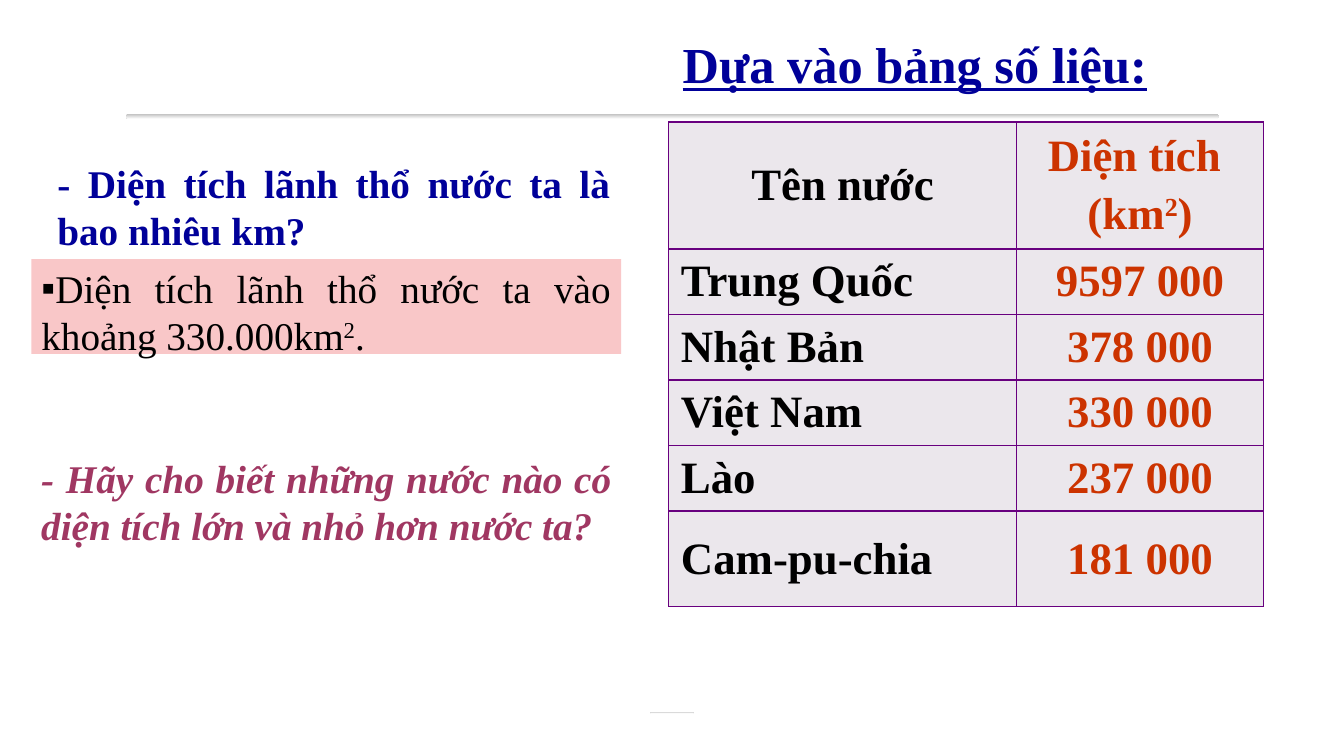
from dataclasses import dataclass

from lxml.etree import SubElement
from pptx import Presentation
from pptx.dml.color import RGBColor
from pptx.enum.shapes import MSO_SHAPE as Shape
from pptx.enum.text import MSO_ANCHOR as Anchor, MSO_AUTO_SIZE as AutoSize, PP_ALIGN as Align
from pptx.oxml.ns import qn
from pptx.util import Emu, Inches, Pt

FONT = "Times New Roman"
NAVY, PLUM, RUST, BLACK = "000099", "A03762", "CC3300", "000000"
PINK, LILAC, PURPLE = "F9C7C8", "EBE7EC", "68007F"
GREY, WHITE = "BFBFBF", "FFFFFF"

prs = Presentation()
prs.slide_width, prs.slide_height = Inches(13.33), Inches(7.5)


@dataclass(frozen=True)
class Box:
    """Place and size as percentages of the slide."""
    x: float
    y: float
    w: float
    h: float


@dataclass(frozen=True)
class Question:
    text: str
    box: Box
    color: str
    italic: bool = False


@dataclass(frozen=True)
class Country:
    name: str
    area: str


def across(share: float) -> Emu:
    return Emu(round(prs.slide_width * share / 100))


def down(share: float) -> Emu:
    return Emu(round(prs.slide_height * share / 100))


def place(box: Box) -> tuple:
    return across(box.x), down(box.y), across(box.w), down(box.h)


def rgb(color: str) -> RGBColor:
    return RGBColor.from_string(color)


def write(tf, text: str, *, size: float, color: str, align=Align.LEFT, bold=False,
          italic=False, underline=False, bullet="", gap=0.0) -> None:
    """Each line is a paragraph; text between carets is superscript."""
    for i, line in enumerate(text.split("\n")):
        p = tf.add_paragraph() if i else tf.paragraphs[0]
        p.alignment = align
        p.space_before = Pt(gap if i else 0)
        if bullet:
            pPr = p._p.get_or_add_pPr()
            pPr.set("marL", "0")
            pPr.set("indent", "0")
            SubElement(pPr, qn("a:buChar")).set("char", bullet)
        for j, part in enumerate(line.split("^")):
            r = p.add_run()
            r.text = part
            r.font.name, r.font.size = FONT, Pt(size)
            r.font.bold, r.font.italic, r.font.underline = bold, italic, underline
            r.font.color.rgb = rgb(color)
            if j % 2:
                r._r.get_or_add_rPr().set("baseline", "30000")


def setup_frame(sp, box: Box):
    """Move a text shape and return its wrapped, top-anchored frame."""
    sp.left, sp.top, sp.width, sp.height = place(box)
    tf = sp.text_frame
    tf.word_wrap = True
    tf.auto_size = AutoSize.SHAPE_TO_FIT_TEXT
    tf.vertical_anchor = Anchor.TOP
    return tf


def add_rule(box: Box) -> None:
    sp = s.shapes.add_shape(Shape.ROUNDED_RECTANGLE, *place(box))
    sp.adjustments[0] = 0.5
    sp.shadow.inherit = False
    sp.line.fill.background()
    sp.fill.gradient()
    sp.fill.gradient_angle = 270
    for stop, color in zip(sp.fill.gradient_stops, (GREY, WHITE)):
        stop.color.rgb = rgb(color)


def add_borders(cell, color: str) -> None:
    tcPr = cell._tc.get_or_add_tcPr()
    for i, side in enumerate(("lnL", "lnR", "lnT", "lnB")):
        ln = tcPr.makeelement(qn(f"a:{side}"), {"w": str(Pt(1))})
        fill = SubElement(ln, qn("a:solidFill"))
        SubElement(fill, qn("a:srgbClr")).set("val", color)
        tcPr.insert(i, ln)


def fill_cell(cell, text: str, color: str, align) -> None:
    cell.fill.solid()
    cell.fill.fore_color.rgb = rgb(LILAC)
    cell.vertical_anchor = Anchor.MIDDLE
    cell.margin_left = cell.margin_right = Inches(0.12)
    cell.margin_top = cell.margin_bottom = Inches(0.05)
    write(cell.text_frame, text, size=32, color=color, align=align, bold=True, gap=6.4)
    add_borders(cell, PURPLE)


def add_area_table(x: float, y: float, cols: list[float], rows: list[float],
                   countries: list[Country]) -> None:
    box = Box(x, y, sum(cols), sum(rows))
    table = s.shapes.add_table(len(rows), len(cols), *place(box)).table
    table.first_row = table.horz_banding = False
    for col, share in zip(table.columns, cols):
        col.width = across(share)
    for row, share in zip(table.rows, rows):
        row.height = down(share)
    for i, country in enumerate(countries):
        name_align = Align.LEFT if i else Align.CENTER
        fill_cell(table.cell(i, 0), country.name, BLACK, name_align)
        fill_cell(table.cell(i, 1), country.area, RUST, Align.CENTER)


COUNTRIES = [
    Country("Tên nước", "Diện tích \n(km^2^)"),
    Country("Trung Quốc", "9597 000"),
    Country("Nhật Bản", "378 000"),
    Country("Việt Nam", "330 000"),
    Country("Lào", "237 000"),
    Country("Cam-pu-chia", "181 000"),
]
QUESTIONS = [
    Question("- Hãy cho biết những nước nào có diện tích lớn và nhỏ hơn nước ta?",
             Box(2.33, 59.47, 43.89, 13.87), PLUM, italic=True),
    Question("- Diện tích lãnh thổ nước ta là bao nhiêu km?",
             Box(3.53, 20.4, 42.61, 13.87), NAVY),
]

s = prs.slides.add_slide(prs.slide_layouts[1])

# Thin rules under the heading and at the foot
for rule in (Box(9.38, 15.07, 81.32, 0.67), Box(48.39, 94.13, 3.23, 0.27)):
    add_rule(rule)

# Heading
write(setup_frame(s.shapes.title, Box(50.04, 3.73, 45.61, 9.47)), "Dựa vào bảng số liệu:",
      size=36, color=NAVY, bold=True, underline=True)

# Table of areas
add_area_table(49.77, 16.13, [25.86, 18.4], [16.8] + [8.67] * 4 + [12.67], COUNTRIES)

# Questions
for q in QUESTIONS:
    write(setup_frame(s.shapes.add_textbox(*place(q.box)), q.box), q.text, size=28,
          color=q.color, align=Align.JUSTIFY, bold=True, italic=q.italic)

# Answer
answer = s.placeholders[1]
answer.fill.solid()
answer.fill.fore_color.rgb = rgb(PINK)
write(setup_frame(answer, Box(2.33, 34.27, 43.89, 13.87)),
      "Diện tích lãnh thổ nước ta vào khoảng 330.000km^2^.",
      size=28, color=BLACK, align=Align.JUSTIFY, bullet="▪")

prs.save("out.pptx")
